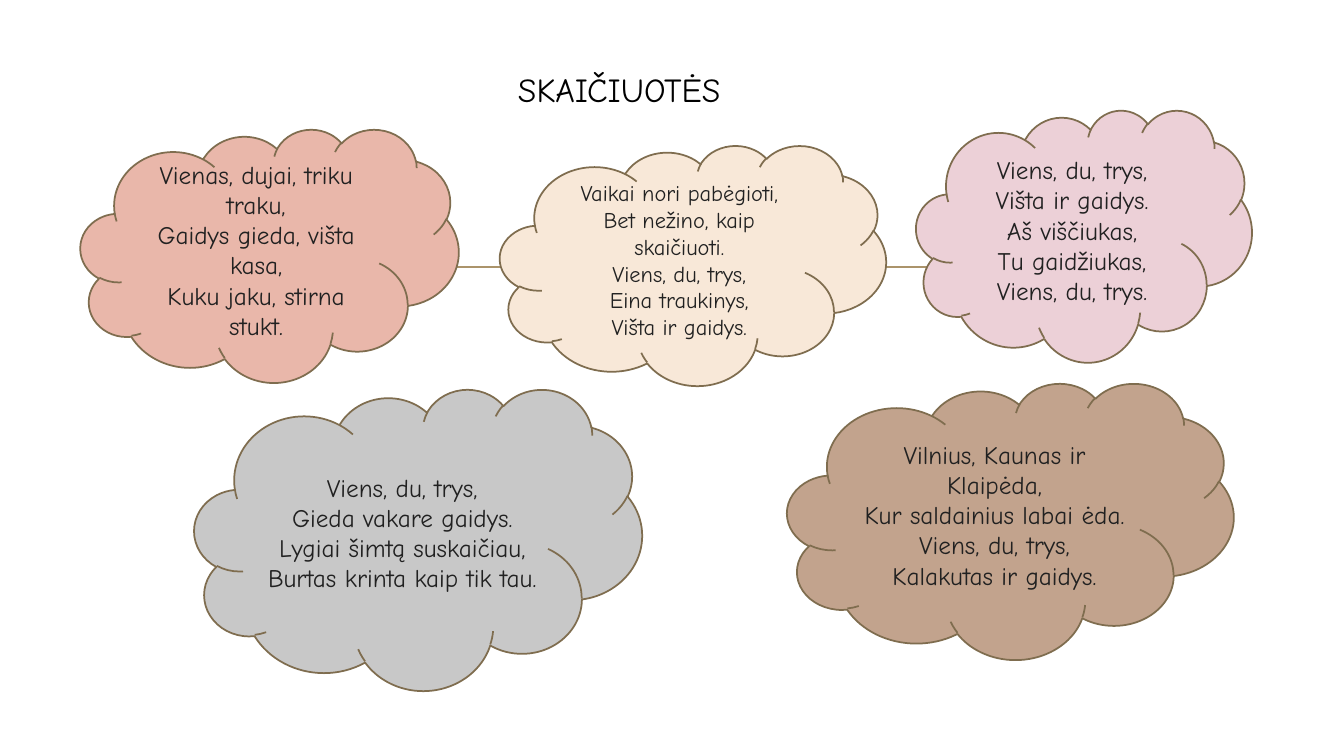
from dataclasses import dataclass

import pptx
import pptx.dml.color
import pptx.enum.shapes
import pptx.enum.text
import pptx.oxml
import pptx.oxml.ns
import pptx.shapes.autoshape
import pptx.slide
import pptx.text.text
import pptx.util

Cm = pptx.util.Cm
Pt = pptx.util.Pt
RGBColor = pptx.dml.color.RGBColor

BLACK = RGBColor(0x00, 0x00, 0x00)
INK = RGBColor(0x21, 0x21, 0x21)
OUTLINE = RGBColor(0x7F, 0x6D, 0x4F)
THREAD = RGBColor(0xAB, 0x94, 0x6B)
PINK = RGBColor(0xEC, 0xD0, 0xD7)
BROWN = RGBColor(0xC2, 0xA3, 0x8D)
CORAL = RGBColor(0xE9, 0xB7, 0xAA)
GREY = RGBColor(0xC8, 0xC8, 0xC8)
CREAM = RGBColor(0xF8, 0xE8, 0xD8)

FONT = "Comic Neue"
LINE_WIDTH = Pt(1.25)
THREAD_Y = Cm(6.73)


@dataclass(frozen=True)
class RhymeCloud:
    left: float
    top: float
    width: float
    height: float
    fill: RGBColor
    rhyme: tuple[str, ...]
    size: int = 18


CLOUDS = (
    RhymeCloud(23.09, 2.77, 8.46, 6.35, PINK, (
        "Viens, du, trys,",
        "Višta ir gaidys.",
        "Aš viščiukas,",
        "Tu gaidžiukas,",
        "Viens, du, trys.",
    )),
    RhymeCloud(19.84, 9.65, 11.25, 6.96, BROWN, (
        "Vilnius, Kaunas ir Klaipėda,",
        "Kur saldainius labai ėda.",
        "Viens, du, trys,",
        "Kalakutas ir gaidys.",
    )),
    RhymeCloud(2.03, 3.25, 9.53, 6.38, CORAL, (
        "Vienas, dujai, triku traku,",
        "Gaidys gieda, višta kasa,",
        "Kuku jaku, stirna stukt.",
    )),
    RhymeCloud(4.9, 9.8, 11.28, 7.59, GREY, (
        "Viens, du, trys,",
        "Gieda vakare gaidys.",
        "Lygiai šimtą suskaičiau,",
        "Burtas krinta kaip tik tau.",
    )),
    RhymeCloud(12.6, 3.66, 9.73, 6.05, CREAM, (
        "Vaikai nori pabėgioti,",
        "Bet nežino, kaip skaičiuoti.",
        "Viens, du, trys,",
        "Eina traukinys,",
        "Višta ir gaidys.",
    ), 16),
)


def format_text(
    text_frame: pptx.text.text.TextFrame,
    size: int,
    color: RGBColor,
    alignment: pptx.enum.text.PP_ALIGN,
) -> None:
    for paragraph in text_frame.paragraphs:
        paragraph.alignment = alignment
        for run in paragraph.runs:
            run.font.name = FONT
            run.font.size = Pt(size)
            run.font.color.rgb = color


def add_thread(slide: pptx.slide.Slide) -> None:
    thread = slide.shapes.add_connector(
        pptx.enum.shapes.MSO_CONNECTOR.STRAIGHT,
        Cm(3.89), THREAD_Y, Cm(30), THREAD_Y,
    )
    thread.line.color.rgb = THREAD
    thread.line.width = LINE_WIDTH
    properties = thread.element.find(pptx.oxml.ns.qn("p:spPr"))
    properties.append(pptx.oxml.parse_xml(
        f"<a:effectLst {pptx.oxml.ns.nsdecls('a')}/>"
    ))


def set_title(slide: pptx.slide.Slide, text: str) -> None:
    title = slide.shapes.title
    title.left, title.top = Cm(12.8), Cm(1.6)
    title.width, title.height = Cm(7.98), Cm(1.27)
    text_frame = title.text_frame
    text_frame.text = text
    text_frame.word_wrap = True
    text_frame.auto_size = pptx.enum.text.MSO_AUTO_SIZE.SHAPE_TO_FIT_TEXT
    text_frame.vertical_anchor = pptx.enum.text.MSO_ANCHOR.TOP
    format_text(text_frame, 24, BLACK, pptx.enum.text.PP_ALIGN.LEFT)


def add_cloud(
    slide: pptx.slide.Slide, cloud: RhymeCloud
) -> pptx.shapes.autoshape.Shape:
    shape = slide.shapes.add_shape(
        pptx.enum.shapes.MSO_SHAPE.CLOUD,
        Cm(cloud.left), Cm(cloud.top), Cm(cloud.width), Cm(cloud.height),
    )
    shape.shadow.inherit = False
    shape.fill.solid()
    shape.fill.fore_color.rgb = cloud.fill
    shape.line.color.rgb = OUTLINE
    shape.line.width = LINE_WIDTH
    text_frame = shape.text_frame
    text_frame.text = "\n".join(cloud.rhyme)
    text_frame.word_wrap = True
    text_frame.vertical_anchor = pptx.enum.text.MSO_ANCHOR.MIDDLE
    format_text(text_frame, cloud.size, INK, pptx.enum.text.PP_ALIGN.CENTER)
    return shape


def main() -> None:
    presentation = pptx.Presentation()
    presentation.slide_width = Cm(33.87)
    presentation.slide_height = Cm(19.05)
    title_only = presentation.slide_layouts.get_by_name("Title Only")
    slide = presentation.slides.add_slide(title_only)
    add_thread(slide)
    set_title(slide, "SKAIČIUOTĖS")
    for cloud in CLOUDS:
        add_cloud(slide, cloud)
    presentation.save("out.pptx")


if __name__ == "__main__":
    main()
